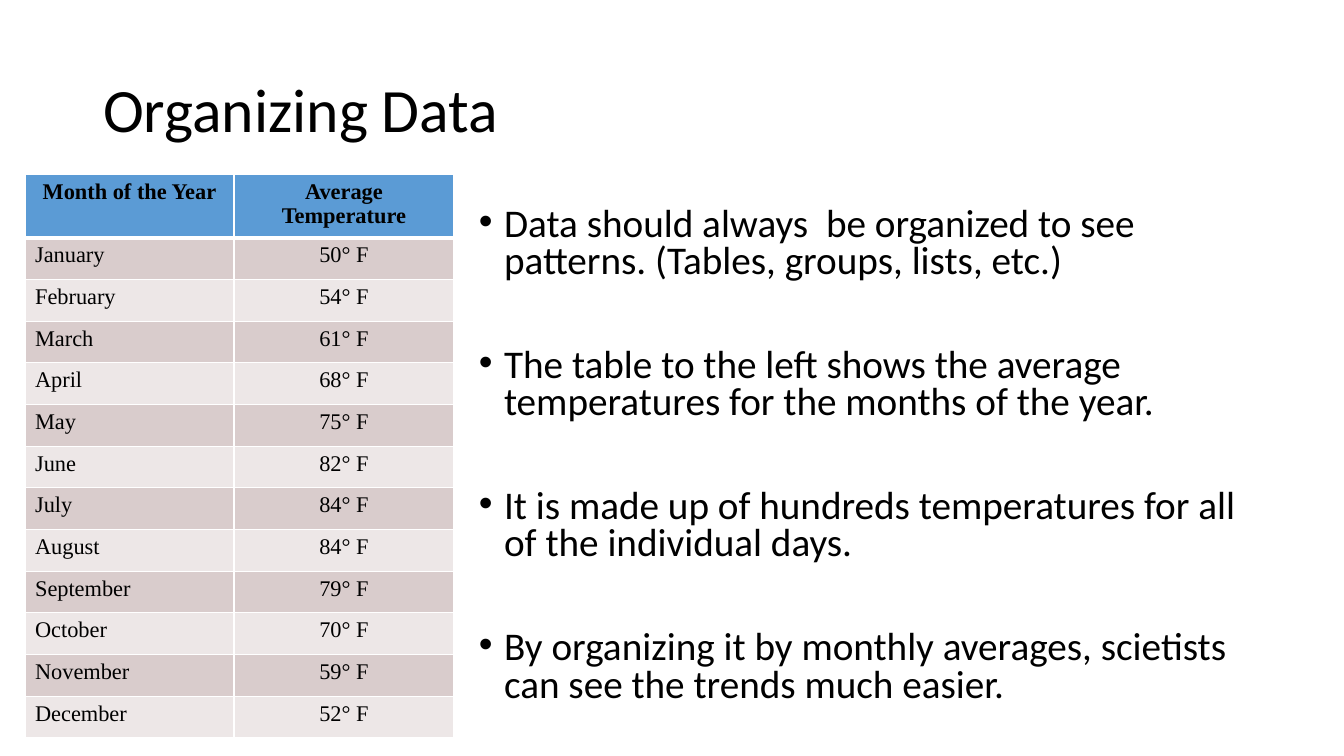
import pptx
import pptx.dml.color
import pptx.enum.text
import pptx.oxml
import pptx.oxml.ns
import pptx.util

PX = 914400 / 100.8
BLACK = pptx.dml.color.RGBColor(0x00, 0x00, 0x00)
WHITE = pptx.dml.color.RGBColor(0xFF, 0xFF, 0xFF)
BLUE = pptx.dml.color.RGBColor(0x5B, 0x9B, 0xD5)
ROSE = pptx.dml.color.RGBColor(0xD9, 0xCC, 0xCC)
PALE_ROSE = pptx.dml.color.RGBColor(0xED, 0xE7, 0xE7)
ALIGN = pptx.enum.text.PP_ALIGN
ANCHOR = pptx.enum.text.MSO_ANCHOR

HEADINGS = ("Month of the Year", "Average Temperature")
TEMPERATURES = {
    "January": 50, "February": 54, "March": 61, "April": 68,
    "May": 75, "June": 82, "July": 84, "August": 84,
    "September": 79, "October": 70, "November": 59, "December": 52,
}
POINTS = (
    "Data should always  be organized to see patterns. (Tables, groups, lists, etc.)",
    "The table to the left shows the average temperatures for the months of the year.",
    "It is made up of hundreds temperatures for all of the individual days.",
    "By organizing it by monthly averages, scietists can see the trends much easier.",
)


def px(length):
    """Turn a length in px into EMU."""
    return pptx.util.Emu(round(length * PX))


def write(paragraph, text, size, font="Calibri", bold=False, align=ALIGN.LEFT):
    """Add one formatted run to a paragraph."""
    paragraph.alignment = align
    run = paragraph.add_run()
    run.text = text
    run.font.name = font
    run.font.size = pptx.util.Pt(size)
    run.font.bold = bold
    run.font.color.rgb = BLACK


def add_title(slide, left, top, width, height):
    """Place the slide title in its placeholder."""
    title = slide.shapes.title
    title.left, title.top, title.width, title.height = map(px, (left, top, width, height))
    frame = title.text_frame
    frame.word_wrap = True
    frame.auto_size = pptx.enum.text.MSO_AUTO_SIZE.NONE
    frame.vertical_anchor = ANCHOR.MIDDLE
    frame.paragraphs[0].line_spacing = 0.9
    write(frame.paragraphs[0], "Organizing Data", 44)


def add_points(slide, left, top, width, height):
    """Place the bulleted points in the given box."""
    frame = slide.shapes.add_textbox(*map(px, (left, top, width, height))).text_frame
    frame.word_wrap = True
    for index, point in enumerate(POINTS):
        paragraph = frame.add_paragraph() if index else frame.paragraphs[0]
        paragraph.line_spacing = 0.8
        paragraph.space_before = pptx.util.Pt(47 if index else 0)
        write(paragraph, point, 28)
        properties = paragraph._p.get_or_add_pPr()
        properties.set("marL", "228600")
        properties.set("indent", "-228600")
        namespace = pptx.oxml.ns.nsdecls("a")
        properties.append(pptx.oxml.parse_xml(f'<a:buFont {namespace} typeface="Arial"/>'))
        properties.append(pptx.oxml.parse_xml(f'<a:buChar {namespace} char="•"/>'))


def add_borders(cell, top, bottom):
    """Draw white cell borders, with top and bottom widths in points."""
    properties = cell._tc.get_or_add_tcPr()
    sides = (("L", 1), ("R", 1), ("T", top), ("B", bottom))
    for position, (side, width) in enumerate(sides):
        properties.insert(position, pptx.oxml.parse_xml(
            f'<a:ln{side} {pptx.oxml.ns.nsdecls("a")} w="{pptx.util.Pt(width)}">'
            f'<a:solidFill><a:srgbClr val="{WHITE}"/></a:solidFill></a:ln{side}>'))


def add_temperatures(slide, left, top, width, height):
    """Place the table of monthly temperatures in the given box."""
    rows = [HEADINGS] + [(month, f"{degrees}° F") for month, degrees in TEMPERATURES.items()]
    box = map(px, (left, top, width, height))
    table = slide.shapes.add_table(len(rows), len(HEADINGS), *box).table
    month_width = 209
    table.columns[0].width = px(month_width)
    table.columns[1].width = px(width - month_width)
    for row, texts in enumerate(rows):
        table.rows[row].height = px(height / len(rows))
        heading = row == 0
        for column, text in enumerate(texts):
            cell = table.cell(row, column)
            cell.fill.solid()
            cell.fill.fore_color.rgb = BLUE if heading else ROSE if row % 2 else PALE_ROSE
            add_borders(cell, 3 if row == 1 else 1, 3 if heading else 1)
            align = ALIGN.CENTER if heading or column else ALIGN.LEFT
            write(cell.text_frame.paragraphs[0], text, 16, "Times New Roman", heading, align)


def main():
    """Build the slide and save it."""
    deck = pptx.Presentation()
    deck.slide_width, deck.slide_height = px(1344), px(756)
    slide = deck.slides.add_slide(deck.slide_layouts[5])
    add_title(slide, 93, 40, 1159, 146)
    add_points(slide, 469, 202, 783, 515)
    add_temperatures(slide, 25, 174, 429, 542)
    deck.save("out.pptx")


if __name__ == "__main__":
    main()
